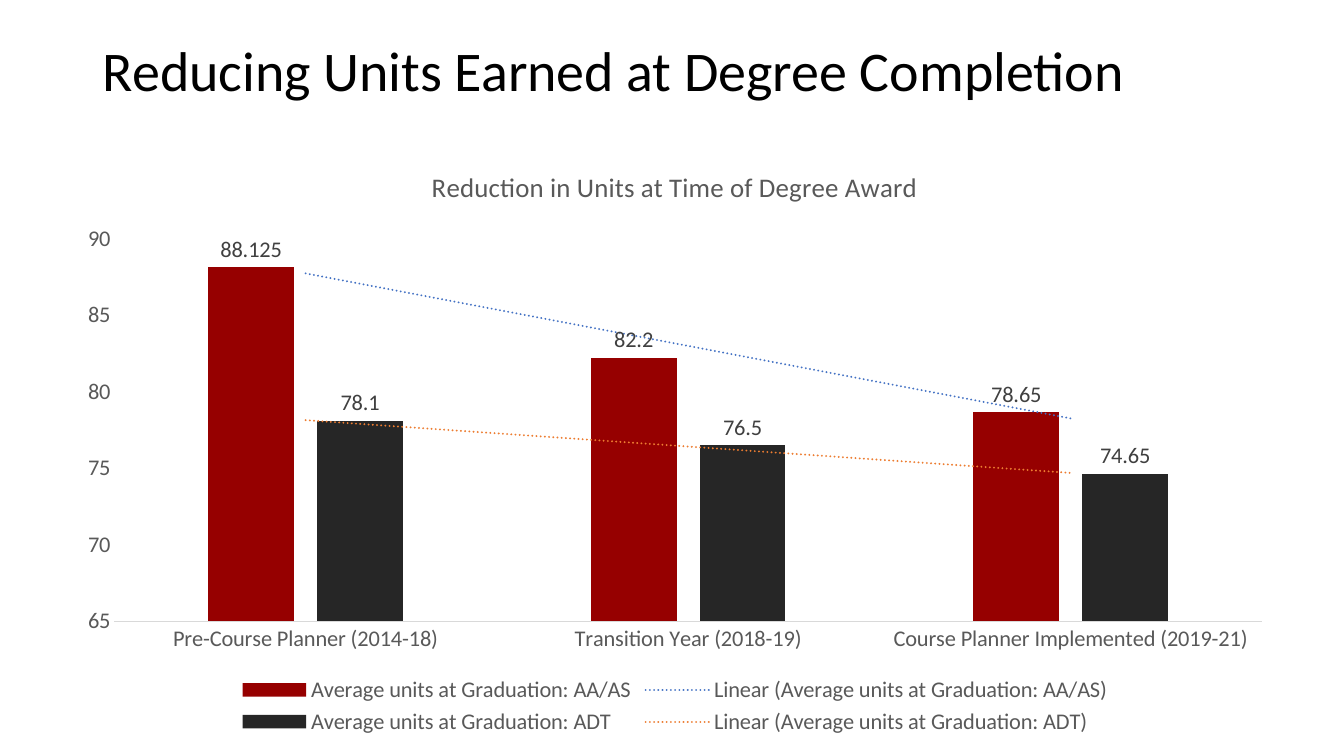
"""Build a slide charting the fall in units earned at degree completion."""
from pptx import Presentation
from pptx.chart.data import CategoryChartData
from pptx.dml.color import RGBColor
from pptx.enum.chart import XL_CHART_TYPE, XL_LABEL_POSITION, XL_LEGEND_POSITION, XL_TICK_MARK
from pptx.enum.text import MSO_ANCHOR, PP_ALIGN
from pptx.oxml import parse_xml
from pptx.oxml.ns import nsdecls, qn
from pptx.util import Inches, Pt

COLUMNS = XL_CHART_TYPE.COLUMN_CLUSTERED
ABOVE = XL_LABEL_POSITION.OUTSIDE_END
BOTTOM = XL_LEGEND_POSITION.BOTTOM
NO_TICK = XL_TICK_MARK.NONE
MIDDLE = MSO_ANCHOR.MIDDLE
LEFT = PP_ALIGN.LEFT

FONT = "Calibri"
GREY = "595959"
HEADLINE = "Reducing Units Earned at Degree Completion"
HEADLINE_BOX = (0.92, 0, 11.5, 1.45)
CHART_TITLE = "Reduction in Units at Time of Degree Award"
CHART_BOX = (0.63, 1.45, 12.13, 5.89)
PERIODS = [
    "Pre-Course Planner (2014-18)",
    "Transition Year (2018-19)",
    "Course Planner Implemented (2019-21)",
]
AWARDS = [
    ("Average units at Graduation: AA/AS", (88.125, 82.2, 78.65), "960000", "4472C4"),
    ("Average units at Graduation: ADT", (78.1, 76.5, 74.65), "262626", "ED7D31"),
]
UNIT_SCALE = {
    "minimum_scale": 65,
    "maximum_scale": 90,
    "major_unit": 5,
    "has_major_gridlines": False,
}
COLUMN_SPACING = {"gap_width": 219, "overlap": -27, "vary_by_categories": False}
LABEL_FORMAT = {"show_value": True, "position": ABOVE}


def apply(target, values):
    for name, value in values.items():
        setattr(target, name, value)


def color(hex_value):
    return RGBColor.from_string(hex_value)


def style_font(font, size, hex_value):
    apply(font, {"size": Pt(size), "name": FONT, "bold": False})
    font.color.rgb = color(hex_value)


def place(shape, box):
    apply(shape, dict(zip(("left", "top", "width", "height"), map(Inches, box))))


def add_trend(series, hex_value):
    trend = parse_xml(
        f'<c:trendline {nsdecls("c", "a")}><c:spPr>'
        f'<a:ln w="{Pt(1.5)}" cap="rnd"><a:solidFill><a:srgbClr val="{hex_value}"/></a:solidFill>'
        '<a:prstDash val="sysDot"/></a:ln></c:spPr>'
        '<c:trendlineType val="linear"/><c:dispRSqr val="0"/><c:dispEq val="0"/></c:trendline>'
    )
    series._element.find(qn("c:cat")).addprevious(trend)


def add_headline(slide):
    headline = slide.shapes.title
    place(headline, HEADLINE_BOX)
    headline.text_frame.text = HEADLINE
    headline.text_frame.vertical_anchor = MIDDLE
    line = headline.text_frame.paragraphs[0]
    apply(line, {"alignment": LEFT, "line_spacing": 0.9})
    style_font(line.runs[0].font, 40, "000000")


def add_units_chart(slide):
    data = CategoryChartData()
    data.categories = PERIODS
    for name, units, _, _ in AWARDS:
        data.add_series(name, units)
    chart = slide.shapes.add_chart(COLUMNS, *map(Inches, CHART_BOX), data).chart
    style_font(chart.font, 16, "000000")

    chart.has_title = True
    chart.chart_title.include_in_layout = False
    chart.chart_title.text_frame.text = CHART_TITLE
    style_font(chart.chart_title.text_frame.paragraphs[0].runs[0].font, 19.2, GREY)

    chart.has_legend = True
    apply(chart.legend, {"position": BOTTOM, "include_in_layout": False})
    style_font(chart.legend.font, 16, GREY)

    for axis in (chart.category_axis, chart.value_axis):
        apply(axis, {"major_tick_mark": NO_TICK, "minor_tick_mark": NO_TICK})
        style_font(axis.tick_labels.font, 16, GREY)
    apply(chart.value_axis, UNIT_SCALE)
    chart.value_axis.format.line.fill.background()
    baseline = chart.category_axis.format.line
    baseline.width = Pt(0.75)
    baseline.color.rgb = color("D9D9D9")

    plot = chart.plots[0]
    apply(plot, COLUMN_SPACING)
    for series, (_, _, fill, trend) in zip(plot.series, AWARDS):
        series.format.fill.solid()
        series.format.fill.fore_color.rgb = color(fill)
        apply(series.data_labels, LABEL_FORMAT)
        style_font(series.data_labels.font, 16, "404040")
        add_trend(series, trend)


def main():
    deck = Presentation()
    apply(deck, {"slide_width": Inches(13.33), "slide_height": Inches(7.5)})
    slide = deck.slides.add_slide(deck.slide_layouts.get_by_name("Title Only"))
    add_headline(slide)
    add_units_chart(slide)
    deck.save("out.pptx")


if __name__ == "__main__":
    main()
